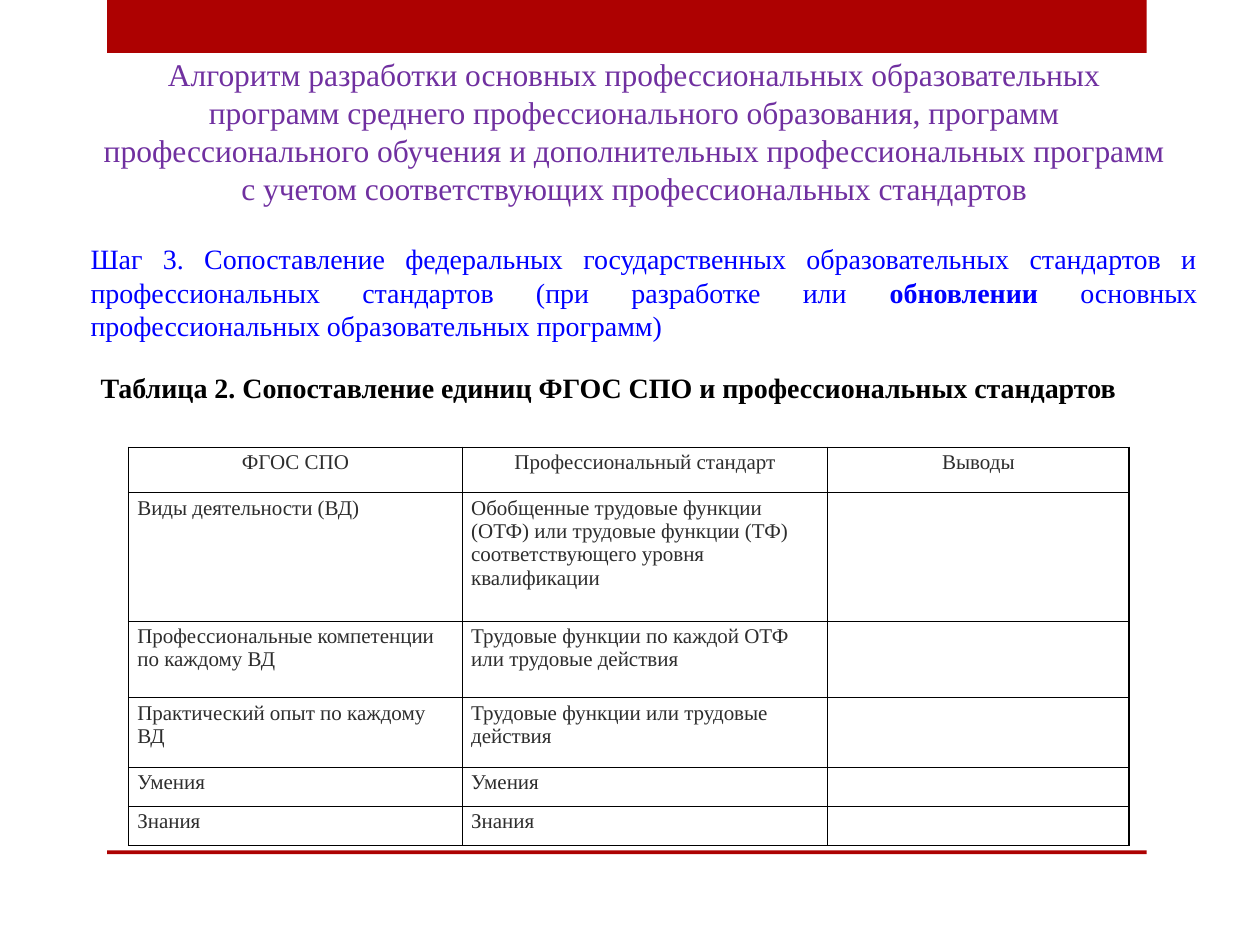
import dataclasses
import pptx
import pptx.dml.color
import pptx.enum.shapes
import pptx.enum.text
import pptx.oxml
import pptx.oxml.ns
import pptx.util
from lxml import etree

Inches = pptx.util.Inches
Align = pptx.enum.text.PP_ALIGN


@dataclasses.dataclass(frozen=True)
class Theme:
    font: str = "Times New Roman"
    red: str = "AD0101"
    violet: str = "7030A0"
    blue: str = "0000FF"
    black: str = "000000"
    gray: str = "2D2D2D"
    title: int = 18
    body: int = 16
    cell: int = 12
    rule: float = 0.75


THEME = Theme()

TITLE = (
    "Алгоритм разработки основных профессиональных образовательных программ "
    "среднего профессионального образования, программ профессионального обучения "
    "и дополнительных профессиональных программ с учетом соответствующих "
    "профессиональных стандартов"
)
STEP = [
    ("Шаг 3. Сопоставление федеральных государственных образовательных стандартов "
     "и профессиональных стандартов (при разработке или ", False),
    ("обновлении", True),
    (" основных профессиональных образовательных программ)", False),
]
LABEL = "Таблица 2. Сопоставление единиц ФГОС СПО и профессиональных стандартов"
ROWS = [
    ("", "", ""),
    ("ФГОС СПО", "Профессиональный стандарт", "Выводы"),
    ("Виды деятельности (ВД)",
     "Обобщенные трудовые функции (ОТФ) или трудовые функции (ТФ) "
     "соответствующего уровня квалификации", ""),
    ("Профессиональные компетенции по каждому ВД",
     "Трудовые функции по каждой ОТФ или трудовые действия", ""),
    ("Практический опыт по каждому ВД", "Трудовые функции или трудовые действия", ""),
    ("Умения", "Умения", ""),
    ("Знания", "Знания", ""),
]
WIDTHS = [2.65, 2.9, 2.39]
HEIGHTS = [0.27, 0.36, 1.02, 0.61, 0.55, 0.31, 0.31]


def color(code):
    return pptx.dml.color.RGBColor.from_string(code)


def add_run(para, text, size, code, bold=False):
    run = para.add_run()
    run.text = text
    run.font.name = THEME.font
    run.font.size = pptx.util.Pt(size)
    run.font.bold = bold
    run.font.color.rgb = color(code)


def add_bar(slide, box):
    bar = slide.shapes.add_shape(
        pptx.enum.shapes.MSO_SHAPE.RECTANGLE, *map(Inches, box))
    bar.shadow.inherit = False
    bar.fill.solid()
    bar.fill.fore_color.rgb = color(THEME.red)
    bar.line.fill.background()


def add_text(slide, box, runs, size, code, align=Align.LEFT):
    frame = slide.shapes.add_textbox(*map(Inches, box)).text_frame
    frame.word_wrap = True
    para = frame.paragraphs[0]
    para.alignment = align
    for text, bold in runs:
        add_run(para, text, size, code, bold)


def add_edges(cell, shown):
    props = cell._tc.get_or_add_tcPr()
    qn = pptx.oxml.ns.qn
    for spot, side in enumerate("LRTB"):
        edge = etree.Element(qn(f"a:ln{side}"), w=str(pptx.util.Pt(THEME.rule)))
        if side in shown:
            fill = etree.SubElement(edge, qn("a:solidFill"))
            etree.SubElement(fill, qn("a:srgbClr"), val=THEME.black)
        else:
            etree.SubElement(edge, qn("a:noFill"))
        props.insert(spot, edge)


def fill_cell(cell, text, align, shown):
    cell.margin_left = cell.margin_right = Inches(0.07)
    cell.margin_top = cell.margin_bottom = Inches(0.03)
    cell.fill.background()
    add_edges(cell, shown)
    para = cell.text_frame.paragraphs[0]
    para.alignment = align
    if text:
        add_run(para, text, THEME.cell, THEME.gray)
    else:
        etree.SubElement(para._p, pptx.oxml.ns.qn("a:endParaRPr"),
                         sz=str(THEME.cell * 100))


def add_grid(slide, left, top):
    box = (left, top, sum(WIDTHS), sum(HEIGHTS))
    table = slide.shapes.add_table(
        len(ROWS), len(WIDTHS), *map(Inches, box)).table
    table.first_row = table.horz_banding = False
    for col, width in zip(table.columns, WIDTHS):
        col.width = Inches(width)
    for row, height in zip(table.rows, HEIGHTS):
        row.height = Inches(height)
    for r, texts in enumerate(ROWS):
        align = Align.CENTER if r == 1 else Align.LEFT
        shown = "LRTB" if r else "B"
        for c, text in enumerate(texts):
            fill_cell(table.cell(r, c), text, align, shown)


def main():
    deck = pptx.Presentation()
    deck.slide_width = Inches(10)
    deck.slide_height = Inches(7.5)
    slide = deck.slides.add_slide(deck.slide_layouts[6])
    add_bar(slide, (0.85, 0, 8.25, 0.42))
    add_bar(slide, (0.85, 6.75, 8.25, 0.03))
    add_text(slide, (0.62, 1.87, 8.98, 0.91), STEP,
             THEME.body, THEME.blue, Align.JUSTIFY)
    add_grid(slide, 1.02, 3.28)
    add_text(slide, (0.7, 2.89, 8.83, 0.98), [(LABEL, True)],
             THEME.body, THEME.black)
    add_text(slide, (0.7, 0.39, 8.67, 1.31), [(TITLE, False)],
             THEME.title, THEME.violet, Align.CENTER)
    deck.save("out.pptx")


if __name__ == "__main__":
    main()
